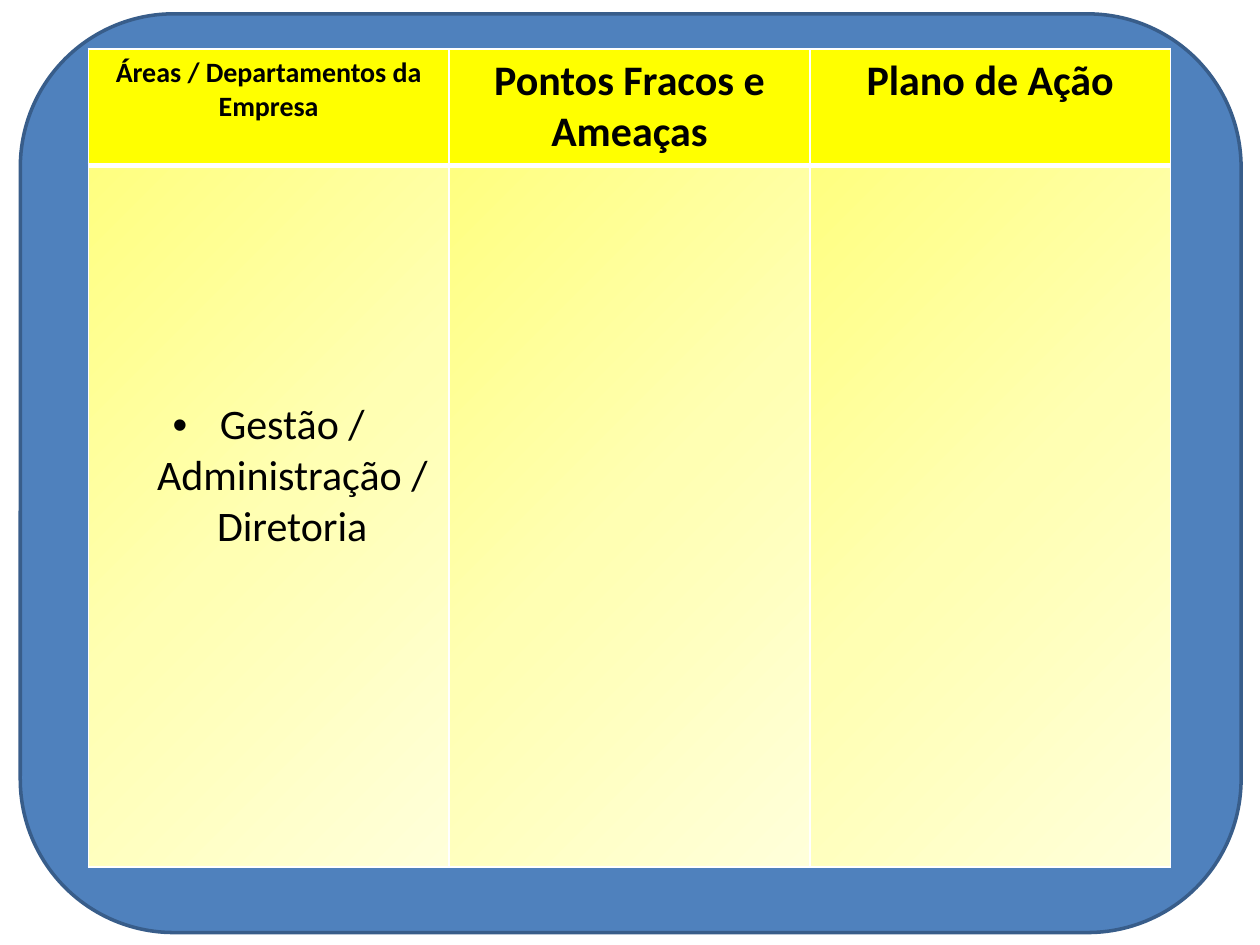
import pptx
import pptx.dml.color
import pptx.enum.shapes
import pptx.enum.text
import pptx.oxml
import pptx.oxml.ns
import pptx.util

Cm = pptx.util.Cm
Pt = pptx.util.Pt

COLORS = {
    "panel": "4F81BD",
    "panel_line": "385D8A",
    "header": "FFFF00",
    "pale": "FFFFDA",
    "medium": "FFFFB3",
    "strong": "FFFF80",
    "text": "000000",
    "border": "FFFFFF",
}
HEADERS = [
    (["Áreas / Departamentos da Empresa"], 16),
    (["Pontos Fracos e", "Ameaças"], 24),
    (["Plano de Ação"], 24),
]
AREA = "Gestão / Administração / Diretoria"
ROW_HEIGHTS = [2.34, 14.15]
HEADER_BORDERS = {"lnL": 1, "lnR": 1, "lnT": 1, "lnB": 3}
BODY_BORDERS = {"lnL": 1, "lnR": 1, "lnT": 3, "lnB": 1}
GRADIENT = [(0, "pale"), (50, "medium"), (100, "strong")]
GRADIENT_ANGLE = 225
MARGIN = Cm(0.13)


def color(name):
    """Return the named palette colour."""
    return pptx.dml.color.RGBColor.from_string(COLORS[name])


def set_attributes(target, values):
    """Set each attribute of the target from a dict."""
    for name, value in values.items():
        setattr(target, name, value)


def parse(markup):
    """Turn DrawingML markup into an element."""
    namespace = pptx.oxml.ns.nsdecls("a")
    return pptx.oxml.parse_xml(markup.replace(" ", f" {namespace} ", 1))


def add_borders(cell, widths):
    """Draw the cell borders with widths given in points."""
    properties = cell._tc.get_or_add_tcPr()
    for tag, width in widths.items():
        properties.append(parse(
            f'<a:{tag} w="{Pt(width)}"><a:solidFill>'
            f'<a:srgbClr val="{COLORS["border"]}"/></a:solidFill></a:{tag}>'))


def add_gradient(cell):
    """Fill the cell with the diagonal yellow gradient."""
    stops = "".join(
        f'<a:gs pos="{position * 1000}"><a:srgbClr val="{COLORS[name]}"/></a:gs>'
        for position, name in GRADIENT)
    cell._tc.get_or_add_tcPr().append(parse(
        f'<a:gradFill rotWithShape="1"><a:gsLst>{stops}</a:gsLst>'
        f'<a:lin ang="{GRADIENT_ANGLE * 60000}" scaled="0"/></a:gradFill>'))


def write_cell(cell, lines, size, bold):
    """Write centred lines into the cell."""
    frame = cell.text_frame
    frame.text = "\n".join(lines)
    for paragraph in frame.paragraphs:
        paragraph.alignment = pptx.enum.text.PP_ALIGN.CENTER
        for run in paragraph.runs:
            set_attributes(run.font, {"name": "Calibri", "size": Pt(size), "bold": bold})
            run.font.color.rgb = color("text")


def add_bullet(paragraph):
    """Give the paragraph a hanging round bullet."""
    properties = paragraph._p.get_or_add_pPr()
    properties.set("marL", str(Cm(0.95)))
    properties.set("indent", str(-Cm(0.95)))
    properties.append(parse('<a:buFont typeface="Arial"/>'))
    properties.append(parse('<a:buChar char="•"/>'))


def add_panel(slide, left, top, width, height):
    """Place the rounded blue panel in its box."""
    panel = slide.shapes.add_shape(
        pptx.enum.shapes.MSO_SHAPE.ROUNDED_RECTANGLE, left, top, width, height)
    panel.shadow.inherit = False
    panel.adjustments[0] = 0.167
    panel.fill.solid()
    panel.fill.fore_color.rgb = color("panel")
    panel.line.color.rgb = color("panel_line")
    panel.line.width = Pt(2)


def add_plan_table(slide, left, top, width, height):
    """Place the action plan table in its box."""
    table = slide.shapes.add_table(
        len(ROW_HEIGHTS), len(HEADERS), left, top, width, height).table
    set_attributes(table, {"first_row": False, "horz_banding": False})
    for row, row_height in zip(table.rows, ROW_HEIGHTS):
        row.height = Cm(row_height)
    margins = {f"margin_{side}": MARGIN for side in ("left", "right", "top", "bottom")}
    for column, (lines, size) in enumerate(HEADERS):
        header, body = table.cell(0, column), table.cell(1, column)
        for cell, borders in ((header, HEADER_BORDERS), (body, BODY_BORDERS)):
            set_attributes(cell, margins)
            add_borders(cell, borders)
        header.fill.solid()
        header.fill.fore_color.rgb = color("header")
        write_cell(header, lines, size, True)
        add_gradient(body)
    area_cell = table.cell(1, 0)
    area_cell.margin_top = Cm(4.72)
    write_cell(area_cell, [AREA], 24, False)
    add_bullet(area_cell.text_frame.paragraphs[0])


def main():
    """Build and save the presentation."""
    presentation = pptx.Presentation()
    set_attributes(presentation, {"slide_width": Cm(25.4), "slide_height": Cm(19.05)})
    slide = presentation.slides.add_slide(presentation.slide_layouts[6])
    add_panel(slide, Cm(0.41), Cm(0.28), Cm(24.61), Cm(18.52))
    add_plan_table(slide, Cm(1.78), Cm(0.99), Cm(21.82), Cm(sum(ROW_HEIGHTS)))
    presentation.save("out.pptx")


if __name__ == "__main__":
    main()
